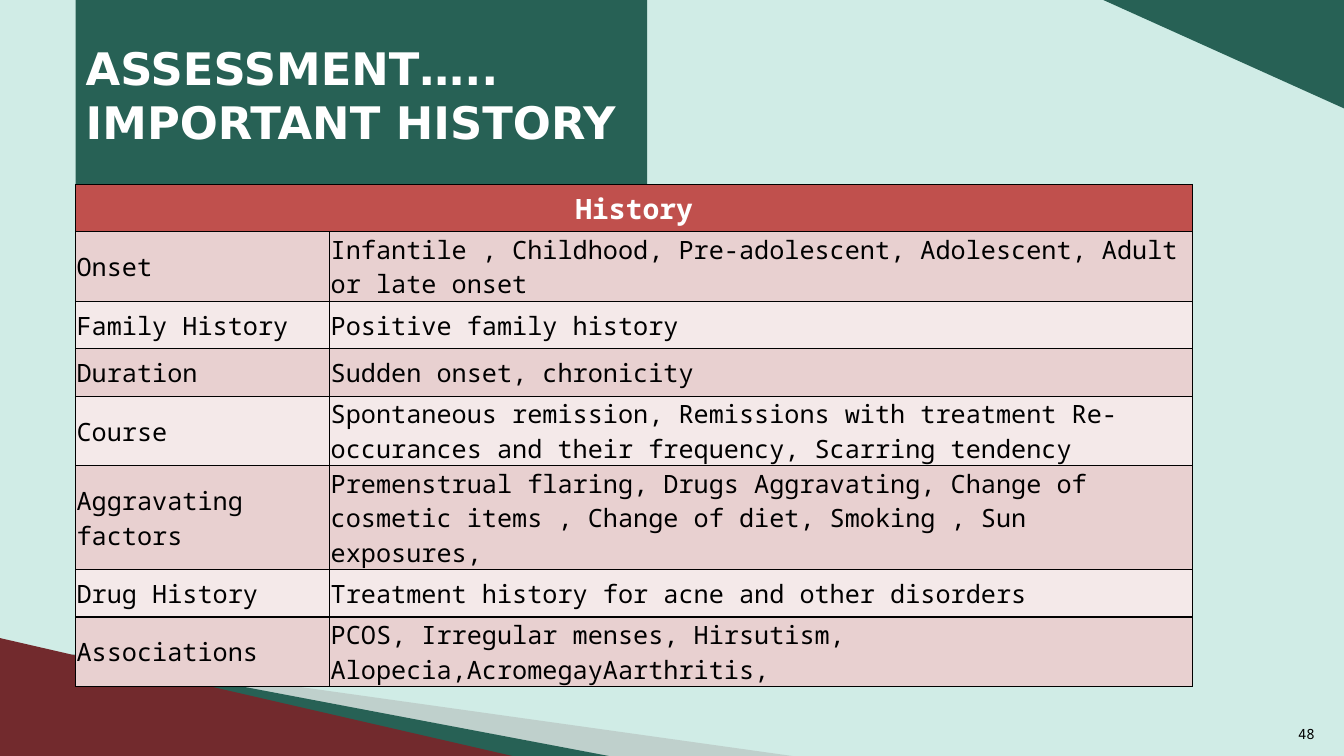
import pptx
import pptx.util
import pptx.dml.color
import pptx.enum.shapes
import pptx.enum.text
import pptx.oxml
import pptx.oxml.ns

PX = 9144  # EMU per px, 100 px to the inch
MONO, SANS = "Noto Sans Mono", "DejaVu Sans"
MINT, GREEN, MAROON, GREY = "D0ECE6", "276155", "722A2D", "A6A6A6"
BLACK, WHITE, RED = "000000", "FFFFFF", "C0504D"
BANDS = ["E8D0D0", "F4E9E9"]
ALIGN = pptx.enum.text.PP_ALIGN
ANCHOR = pptx.enum.text.MSO_ANCHOR
SHAPE = pptx.enum.shapes.MSO_SHAPE

HISTORY = [
    ("Onset", "Infantile , Childhood, Pre-adolescent, Adolescent, Adult or late onset", 63),
    ("Family History", "Positive family history", 47),
    ("Duration", "Sudden onset, chronicity", 47),
    ("Course", "Spontaneous remission, Remissions with treatment "
               "Re-occurances and their frequency, Scarring tendency", 63),
    ("Aggravating factors", "Premenstrual flaring, Drugs Aggravating, Change of cosmetic items , "
                            "Change of diet, Smoking , Sun exposures,", 63),
    ("Drug History", "Treatment history for acne and other disorders", 47),
    ("Associations", "PCOS, Irregular menses, Hirsutism, Alopecia,AcromegayAarthritis,", 63),
]


def px(*lengths):
    return [pptx.util.Emu(n * PX) for n in lengths]


def rgb(color):
    return pptx.dml.color.RGBColor.from_string(color)


def set_text(tf, text, size=18, font=MONO, color=BLACK, bold=False,
             align=ALIGN.LEFT, anchor=ANCHOR.MIDDLE):
    tf.word_wrap = True
    tf.vertical_anchor = anchor
    p = tf.paragraphs[0]
    p.text = text
    p.alignment = align
    for r in p.runs:
        r.font.size = pptx.util.Pt(size)
        r.font.name = font
        r.font.bold = bold
        r.font.color.rgb = rgb(color)


def paint(sp, color, alpha=100):
    sp.shadow.inherit = False
    sp.line.fill.background()
    sp.fill.solid()
    sp.fill.fore_color.rgb = rgb(color)
    if alpha < 100:
        clr = sp.fill._xPr.find(".//" + pptx.oxml.ns.qn("a:srgbClr"))
        clr.append(pptx.oxml.parse_xml(
            f'<a:alpha {pptx.oxml.ns.nsdecls("a")} val="{alpha * 1000}"/>'))


def add_block(s, kind, box, color, rotation=0):
    sp = s.shapes.add_shape(kind, *px(*box))
    sp.rotation = rotation
    paint(sp, color)


def add_ray(s, points, color, alpha=100):
    builder = s.shapes.build_freeform(*points[0], scale=PX)
    builder.add_line_segments(points[1:], close=True)
    paint(builder.convert_to_shape(), color, alpha)


def format_cell(cell, text, fill, **fmt):
    cell.margin_left, cell.margin_top, cell.margin_right, cell.margin_bottom = px(1, 1, 1, 0)
    tcPr = cell._tc.get_or_add_tcPr()
    for side in "LRTB":
        tcPr.append(pptx.oxml.parse_xml(
            f'<a:ln{side} {pptx.oxml.ns.nsdecls("a")} w="12700"><a:solidFill>'
            f'<a:srgbClr val="{BLACK}"/></a:solidFill></a:ln{side}>'))
    cell.fill.solid()
    cell.fill.fore_color.rgb = rgb(fill)
    set_text(cell.text_frame, text, **fmt)
    cell.vertical_anchor = ANCHOR.MIDDLE


def add_history_table(s):
    heights = [47] + [height for _, _, height in HISTORY]
    table = s.shapes.add_table(len(heights), 2, *px(75, 183, 1108, sum(heights))).table
    for column, width in zip(table.columns, px(252, 856)):
        column.width = width
    for row, height in zip(table.rows, px(*heights)):
        row.height = height

    # Heading across both columns
    table.cell(0, 0).merge(table.cell(0, 1))
    for column in range(2):
        format_cell(table.cell(0, column), "" if column else "History", RED,
                    size=20, color=WHITE, bold=True, align=ALIGN.CENTER)

    # Banded rows
    for i, (topic, details, _) in enumerate(HISTORY):
        for column, text in enumerate((topic, details)):
            format_cell(table.cell(i + 1, column), text, BANDS[i % 2])


def main():
    prs = pptx.Presentation()
    prs.slide_width, prs.slide_height = px(1333, 750)
    s = prs.slides.add_slide(prs.slide_layouts[5])

    # Background and corner decoration
    s.background.fill.solid()
    s.background.fill.fore_color.rgb = rgb(MINT)
    add_ray(s, [(73, 650), (793, 751), (608, 751)], GREY, alpha=40)
    add_ray(s, [(71, 649), (609, 751), (496, 752)], GREEN)
    add_block(s, SHAPE.RIGHT_TRIANGLE, (0, 633, 517, 119), MAROON)
    add_block(s, SHAPE.RIGHT_TRIANGLE, (1092, -1, 242, 109), GREEN, rotation=180)

    # Title panel, with the title brought in front of it
    add_block(s, SHAPE.RECTANGLE, (75, 0, 567, 183), GREEN)
    title = s.shapes.title
    title.left, title.top, title.width, title.height = px(75, 25, 575, 137)
    set_text(title.text_frame, "ASSESSMENT…..\vIMPORTANT HISTORY",
             size=32, font=SANS, color=WHITE, bold=True)
    s.shapes._spTree.append(title._element)

    add_history_table(s)

    # Page number
    number = s.shapes.add_textbox(*px(1261, 701, 53, 40))
    set_text(number.text_frame, "48", size=10, align=ALIGN.RIGHT, anchor=ANCHOR.BOTTOM)

    prs.save("out.pptx")


if __name__ == "__main__":
    main()
